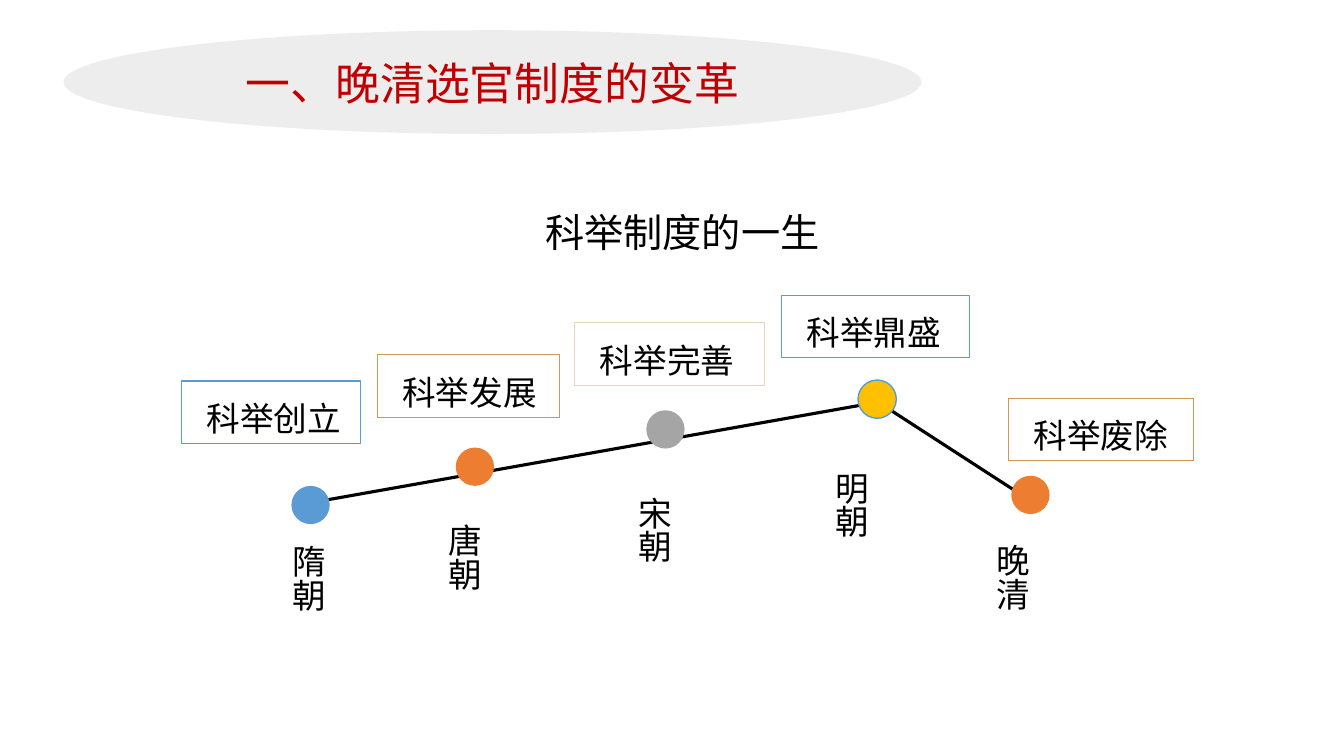
from dataclasses import dataclass

from pptx import Presentation
from pptx import util as u
from pptx.dml.color import RGBColor
from pptx.enum import shapes, text
from pptx.oxml import ns, xmlchemy

PX = 9144
FONT = "Noto Sans CJK SC"
DOT = 38
OVAL = shapes.MSO_SHAPE.OVAL
RECT = shapes.MSO_SHAPE.RECTANGLE

Box = tuple[int, int, int, int]


@dataclass
class Stage:
    """One dynasty on the path: its dot, its name and its boxed event."""

    name: str
    event: str
    dot: tuple[int, int]
    fill: str
    rim: str
    era: Box
    card: Box
    edge: str


STAGES = [
    Stage("隋朝", "科举创立", (289, 482), "5B9BD5", "",
          (270, 531, 72, 98), (180, 378, 178, 62), "5B9BD5"),
    Stage("唐朝", "科举发展", (452, 444), "ED7D31", "",
          (425, 510, 72, 87), (374, 352, 181, 62), "CD985A"),
    Stage("宋朝", "科举完善", (641, 407), "A5A5A5", "",
          (614, 483, 72, 126), (570, 320, 188, 62), "EAD4BA"),
    Stage("明朝", "科举鼎盛", (851, 377), "FFC000", "5B9BD5",
          (809, 458, 72, 105), (775, 293, 187, 62), "5B9BD5"),
    Stage("晚清", "科举废除", (1003, 472), "ED7D31", "",
          (969, 530, 72, 98), (1000, 395, 184, 62), "CD985A"),
]
PATHS = [(868, 397, 1024, 498), (307, 499, 882, 397)]


def scale(box: Box) -> list[u.Emu]:
    """Turn px into EMU."""
    return [u.Emu(n * PX) for n in box]


def tint(code: str) -> RGBColor:
    """Return the colour of a hex string."""
    return RGBColor.from_string(code)


def write(shape, words: str, size: int, code: str = "000000",
          gap: float = 1.3, left: int = 10) -> None:
    """Put one styled paragraph into a shape."""
    frame = shape.text_frame
    frame.text = words
    frame.word_wrap = True
    frame.vertical_anchor = text.MSO_ANCHOR.TOP
    frame.margin_left = u.Emu(left * PX)
    para = frame.paragraphs[0]
    para.alignment = text.PP_ALIGN.LEFT
    para.line_spacing = gap
    run = para.runs[0]
    run.font.size = u.Pt(size)
    run.font.name = FONT
    run.font.color.rgb = tint(code)
    face = xmlchemy.OxmlElement("a:ea")
    face.set("typeface", FONT)
    run.font._element.find(ns.qn("a:latin")).addnext(face)


def draw(slide, kind, box: Box, fill: str = "", edge: str = "",
         width: float = 1):
    """Add a preset shape with an optional fill and edge."""
    shape = slide.shapes.add_shape(kind, *scale(box))
    shape.shadow.inherit = False
    if fill:
        shape.fill.solid()
        shape.fill.fore_color.rgb = tint(fill)
    else:
        shape.fill.background()
    if edge:
        shape.line.color.rgb = tint(edge)
        shape.line.width = u.Pt(width)
    else:
        shape.line.fill.background()
    return shape


def link(slide, ends: Box) -> None:
    """Add a straight black line."""
    line = slide.shapes.add_connector(
        shapes.MSO_CONNECTOR.STRAIGHT, *scale(ends))
    line.line.color.rgb = tint("000000")
    line.line.width = u.Pt(2.25)
    line._element.spPr.append(xmlchemy.OxmlElement("a:effectLst"))


def place(slide, stage: Stage) -> None:
    """Draw one stage of the path."""
    draw(slide, OVAL, (*stage.dot, DOT, DOT), stage.fill, stage.rim)
    era = slide.shapes.add_textbox(*scale(stage.era))
    write(era, stage.name, 24)
    era.text_frame._txBody.bodyPr.set("vert", "eaVert")
    card = draw(slide, RECT, stage.card, edge=stage.edge, width=0.75)
    write(card, stage.event, 24, left=25)


def main() -> None:
    """Build and save the slide."""
    deck = Presentation()
    deck.slide_width, deck.slide_height = scale((1333, 750))
    slide = deck.slides.add_slide(deck.slide_layouts[6])

    head = slide.shapes.add_textbox(*scale((531, 188, 311, 71)))
    write(head, "科举制度的一生", 28)
    for ends in PATHS:
        link(slide, ends)
    for stage in STAGES:
        place(slide, stage)

    title = draw(slide, OVAL, (63, 30, 851, 103), "EDEDED")
    write(title, "一、晚清选官制度的变革", 32, "C00000", gap=1.0)
    title.text_frame.vertical_anchor = text.MSO_ANCHOR.MIDDLE
    title.text_frame.paragraphs[0].alignment = text.PP_ALIGN.CENTER
    deck.save("out.pptx")


if __name__ == "__main__":
    main()
